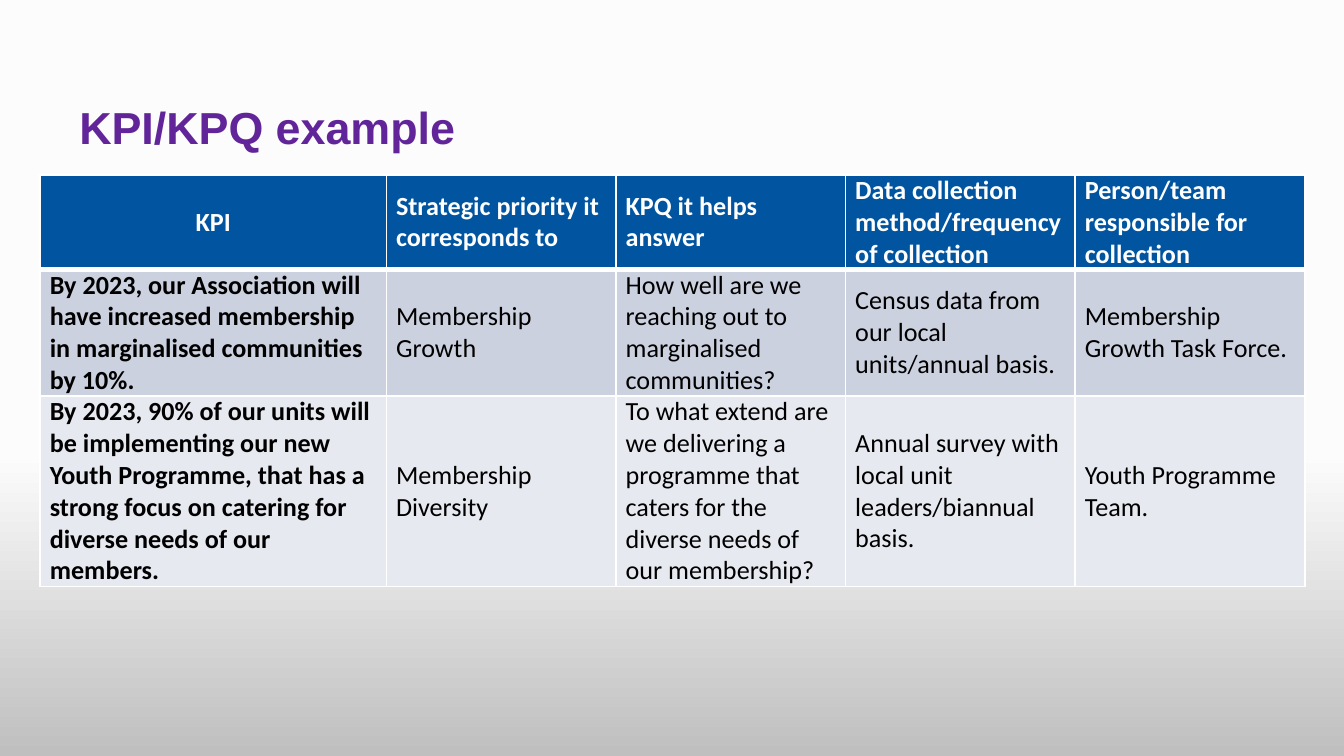
import pptx
import pptx.dml.color
import pptx.enum.text
import pptx.oxml
import pptx.oxml.ns
import pptx.util

Pt = pptx.util.Pt
ALIGN = pptx.enum.text.PP_ALIGN
MIDDLE = pptx.enum.text.MSO_ANCHOR.MIDDLE
TOP = pptx.enum.text.MSO_ANCHOR.TOP

COLORS = {
    "title": "622599", "head": "0054A0", "odd": "CCD1DF", "even": "E7E9F0",
    "white": "FFFFFF", "black": "000000", "light": "FCFCFC", "grey": "BFBFBF",
}
WIDTHS = [185.5] + [123] * 4
ROWS = [
    ("head", 50.5, [
        "KPI",
        "Strategic priority it corresponds to",
        "KPQ it helps answer",
        "Data collection method/frequency of collection",
        "Person/team responsible for collection",
    ]),
    ("odd", 68, [
        "By 2023, our Association will have increased membership in "
        "marginalised communities by 10%.",
        "Membership Growth",
        "How well are we reaching out to marginalised communities?",
        "Census data from our local units/annual basis.",
        "Membership Growth Task Force.",
    ]),
    ("even", 102, [
        "By 2023, 90% of our units will be implementing our new Youth "
        "Programme, that has a strong focus on catering for diverse needs "
        "of our members.",
        "Membership Diversity",
        "To what extend are we delivering a programme that caters for the "
        "diverse needs of our membership?",
        "Annual survey with local unit leaders/biannual basis.",
        "Youth Programme Team.",
    ]),
]


def color(name):
    return pptx.dml.color.RGBColor.from_string(COLORS[name])


def apply(item, values):
    """Set each named attribute of item."""
    for name, value in values.items():
        setattr(item, name, value)


def write(frame, text, tint, align=ALIGN.LEFT, **style):
    para = frame.paragraphs[0]
    para.alignment = align
    run = para.add_run()
    run.text = text
    apply(run.font, style)
    run.font.color.rgb = color(tint)


def paint(slide):
    """Fill the background from light to grey, top to bottom."""
    fill = slide.background.fill
    fill.gradient()
    fill.gradient_angle = 270
    for stop, place, name in zip(fill.gradient_stops, (0.6, 1), ("light", "grey")):
        stop.position = place
        stop.color.rgb = color(name)


def border(cell, side, width):
    line = pptx.oxml.parse_xml(
        f'<a:ln{side} {pptx.oxml.ns.nsdecls("a")} w="{Pt(width)}">'
        f'<a:solidFill><a:srgbClr val="{COLORS["white"]}"/></a:solidFill>'
        f'</a:ln{side}>'
    )
    cell._tc.get_or_add_tcPr().append(line)


def add_title(slide, text):
    box = slide.shapes.add_textbox(Pt(42.5), Pt(49.7), Pt(642), Pt(36))
    apply(box.text_frame, {
        "word_wrap": True, "vertical_anchor": MIDDLE,
        "margin_left": 0, "margin_right": 0,
    })
    write(box.text_frame, text, "title", name="Arial", size=Pt(24), bold=True)


def add_grid(slide):
    frame = slide.shapes.add_table(
        len(ROWS), len(WIDTHS), Pt(21.5), Pt(93.7),
        Pt(sum(WIDTHS)), Pt(sum(row[1] for row in ROWS)),
    )
    table = frame.table
    for column, width in zip(table.columns, WIDTHS):
        column.width = Pt(width)
    for r, (kind, height, texts) in enumerate(ROWS):
        table.rows[r].height = Pt(height)
        for c, text in enumerate(texts):
            cell = table.cell(r, c)
            head, first = r == 0, c == 0
            apply(cell, {
                "margin_left": Pt(5.2), "margin_right": Pt(5.2),
                "margin_top": 0, "margin_bottom": 0,
                "vertical_anchor": TOP if first and not head else MIDDLE,
            })
            for side in "LRTB":
                thick = (side, r) in (("B", 0), ("T", 1))
                border(cell, side, 3 if thick else 1)
            cell.fill.solid()
            cell.fill.fore_color.rgb = color(kind)
            write(cell.text_frame, text, "white" if head else "black",
                  ALIGN.CENTER if head and first else ALIGN.LEFT,
                  name="Calibri", size=Pt(14), bold=head or first)


def main():
    deck = pptx.Presentation()
    apply(deck, {"slide_width": Pt(720), "slide_height": Pt(405)})
    slide = deck.slides.add_slide(deck.slide_layouts[6])
    paint(slide)
    add_title(slide, "KPI/KPQ example")
    add_grid(slide)
    deck.save("out.pptx")


if __name__ == "__main__":
    main()
